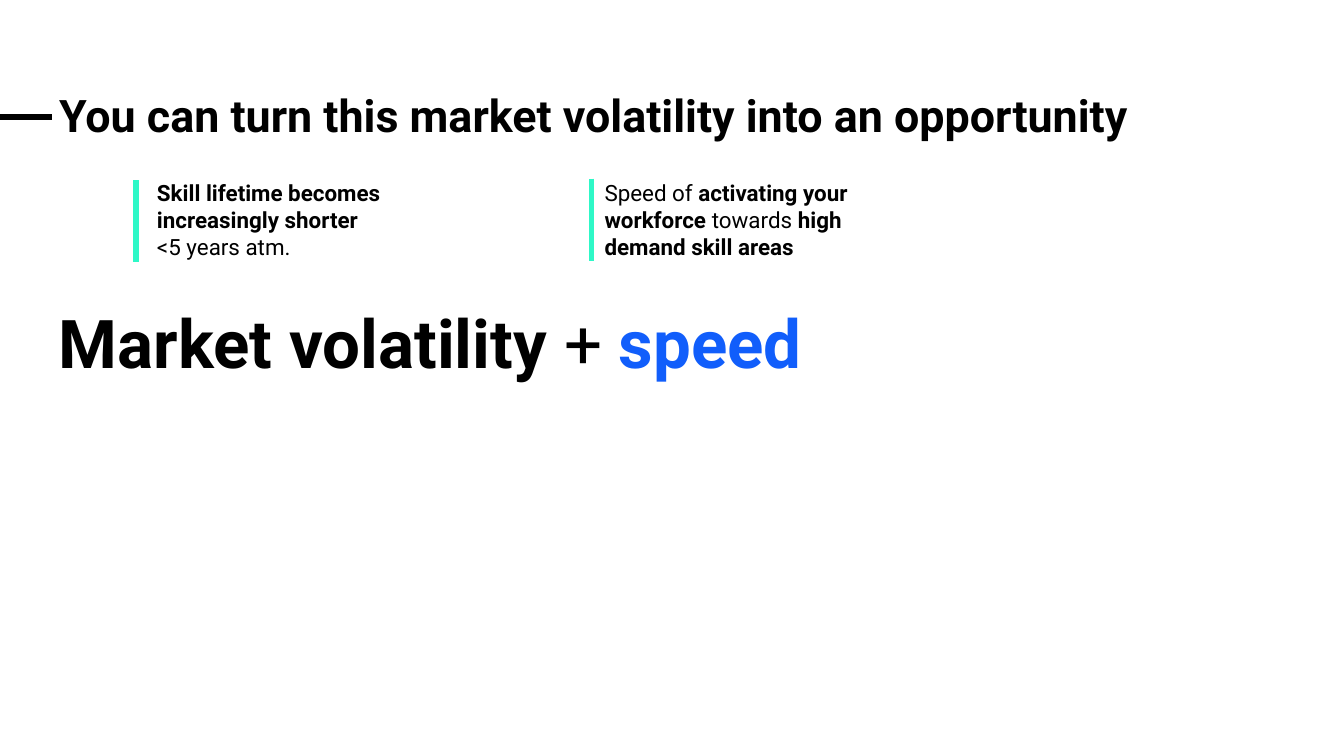
from pptx import Presentation
from pptx.dml.color import RGBColor
from pptx.enum.shapes import MSO_CONNECTOR
from pptx.enum.text import MSO_ANCHOR, MSO_AUTO_SIZE, PP_ALIGN
from pptx.util import Inches, Pt
from lxml.etree import SubElement
from pptx.oxml.ns import qn

WIDTH = 10
HEIGHT = WIDTH * 9 / 16
MARGIN = 0.34
CONTENT_WIDTH = WIDTH - 2 * MARGIN
BLACK, BLUE, MINT = "000000", "115EFB", "2EF8C7"

TITLE = [[("You can turn this market volatility into an opportunity", True, BLACK)]]
EQUATION = [[("Market volatility ", True, BLACK), ("+ ", False, BLACK), ("speed", True, BLUE)]]
POINTS = [
    {"left": 1.07, "bar": (1.01, 1.34), "text": [
        [("Skill lifetime becomes increasingly shorter", True, BLACK)],
        [("<5 years atm.", False, BLACK)],
    ]},
    {"left": 4.4, "bar": (4.4, 1.33), "text": [[
        ("Speed of ", False, BLACK),
        ("activating your workforce ", True, BLACK),
        ("towards", False, BLACK),
        (" high demand skill areas", True, BLACK),
    ]]},
]
POINT_TOP, POINT_WIDTH, POINT_HEIGHT = 1.24, 2.13, 0.79
BAR_HEIGHT = 0.61
DASH_Y, DASH_LENGTH = 0.87, 0.39


def rgb(value):
    return RGBColor.from_string(value)


def write(box, paragraphs, size, anchor=MSO_ANCHOR.MIDDLE):
    frame = box.text_frame
    frame.word_wrap = True
    frame.auto_size = MSO_AUTO_SIZE.NONE
    frame.vertical_anchor = anchor
    frame.margin_left = frame.margin_right = Inches(0.1)
    frame.margin_top = frame.margin_bottom = Inches(0.1)
    for index, runs in enumerate(paragraphs):
        paragraph = frame.paragraphs[0] if index == 0 else frame.add_paragraph()
        paragraph.alignment = PP_ALIGN.LEFT
        paragraph.font.name = "Roboto"
        paragraph.font.size = Pt(size)
        for text, bold, color in runs:
            run = paragraph.add_run()
            run.text = text
            run.font.bold = bold
            run.font.color.rgb = rgb(color)


def add_text(slide, left, top, width, height, paragraphs, size):
    box = slide.shapes.add_textbox(Inches(left), Inches(top), Inches(width), Inches(height))
    write(box, paragraphs, size)


def add_line(slide, x1, y1, x2, y2, color):
    line = slide.shapes.add_connector(
        MSO_CONNECTOR.STRAIGHT, Inches(x1), Inches(y1), Inches(x2), Inches(y2))
    line.line.color.rgb = rgb(color)
    line.line.width = Pt(3)
    SubElement(line._element.spPr, qn("a:effectLst"))


def main():
    deck = Presentation()
    deck.slide_width, deck.slide_height = Inches(WIDTH), Inches(HEIGHT)
    slide = deck.slides.add_slide(deck.slide_layouts[5])

    title = slide.shapes.title
    title.left, title.top = Inches(MARGIN), Inches(0.49)
    title.width, title.height = Inches(CONTENT_WIDTH), Inches(0.63)
    write(title, TITLE, 24, MSO_ANCHOR.TOP)
    heading = title.text_frame.paragraphs[0]
    heading.line_spacing = 1.15
    heading.space_before = Pt(0)
    heading.space_after = Pt(16)

    add_line(slide, 0, DASH_Y, DASH_LENGTH, DASH_Y, BLACK)
    add_text(slide, MARGIN, 1.94, CONTENT_WIDTH, 1.2, EQUATION, 36)
    for point in POINTS:
        x, y = point["bar"]
        add_line(slide, x, y, x, y + BAR_HEIGHT, MINT)
        add_text(slide, point["left"], POINT_TOP, POINT_WIDTH, POINT_HEIGHT, point["text"], 12)

    deck.save("out.pptx")


if __name__ == "__main__":
    main()
